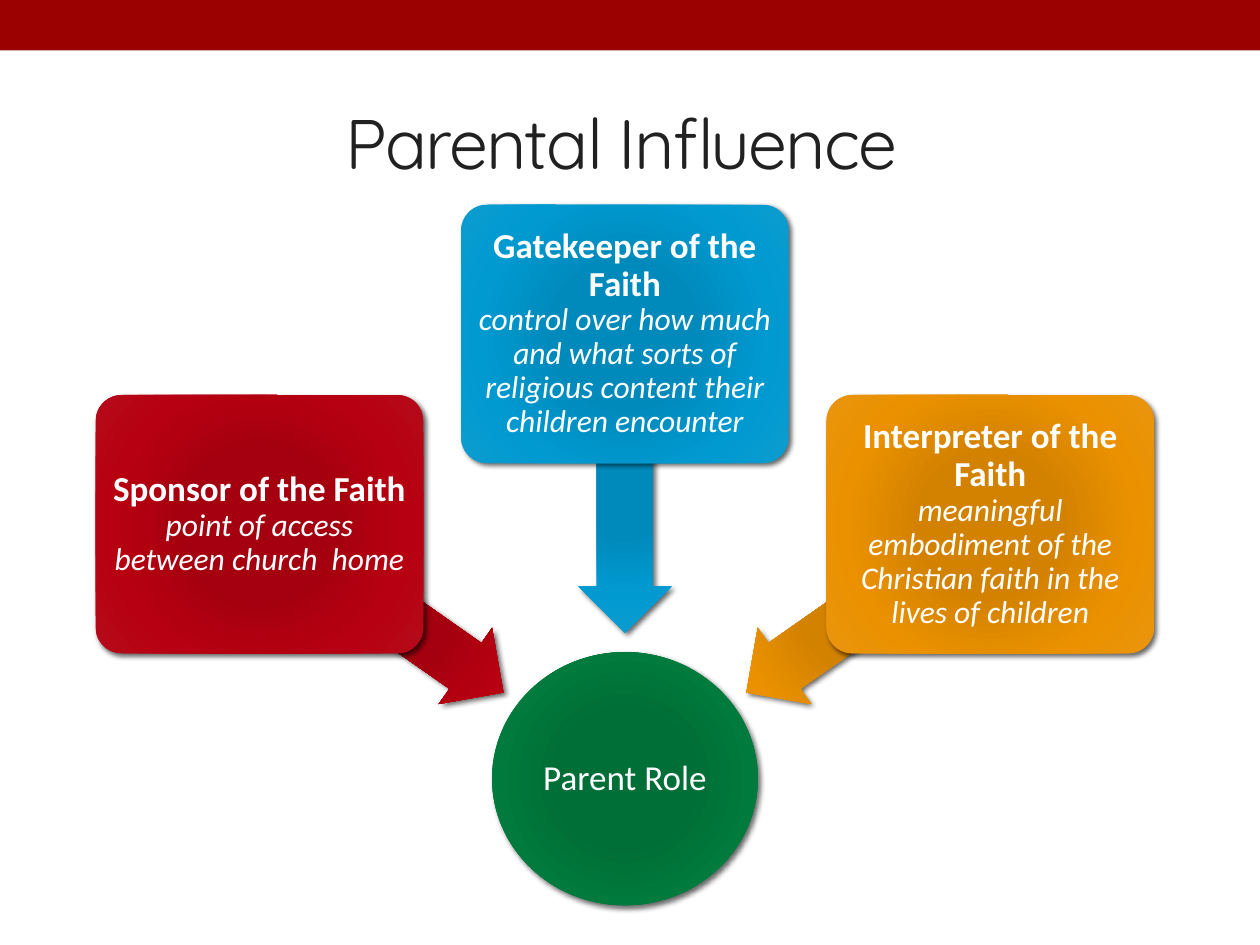
import pptx
import pptx.util
import pptx.oxml
import pptx.oxml.ns
import pptx.dml.color
import pptx.enum.shapes
import pptx.enum.text

Inches, Pt = pptx.util.Inches, pptx.util.Pt
Kind = pptx.enum.shapes.MSO_SHAPE
mid = pptx.enum.text.MSO_ANCHOR.MIDDLE
hub = pptx.enum.text.PP_ALIGN.CENTER
rgb = pptx.dml.color.RGBColor.from_string

theme = {
    "band": "9B0101",
    "red": ("A4000F", "B70011", "B50B1B"),
    "blue": ("008ABC", "009AD1", "0C9CCE"),
    "gold": ("D38200", "EB9100", "E8950E"),
    "green": ("006E37", "007A3D", "008040"),
    "title": {"name": "Quicksand", "size": Pt(40), "color": "212121"},
    "role": {"name": "Calibri", "size": Pt(20), "color": "FFFFFF"},
    "head": {"name": "Calibri", "size": Pt(20), "color": "FFFFFF", "bold": True},
    "note": {"name": "Calibri", "size": Pt(18), "color": "FFFFFF", "italic": True},
}

deck = pptx.Presentation()
deck.slide_width, deck.slide_height = Inches(10), Inches(7.5)
slide = deck.slides.add_slide(deck.slide_layouts[5])


def draw(kind, x, y, wide, high, hues, turn=0, adjust=()):
    shape = slide.shapes.add_shape(
        kind, Inches(x - wide / 2), Inches(y - high / 2), Inches(wide), Inches(high))
    shape.rotation = turn
    for i, value in enumerate(adjust):
        shape.adjustments[i] = value
    dark, main, edge = hues
    stops = "".join(
        f'<a:gs pos="{pos}000"><a:srgbClr val="{hue}"/></a:gs>'
        for pos, hue in ((0, dark), (34, dark), (70, main), (100, edge)))
    space = pptx.oxml.ns.nsdecls("a")
    props = shape._element.spPr
    props.append(pptx.oxml.parse_xml(
        f'<a:gradFill {space} rotWithShape="1"><a:gsLst>{stops}</a:gsLst>'
        '<a:path path="circle"><a:fillToRect l="100000" t="100000" r="100000" b="100000"/>'
        '</a:path></a:gradFill>'))
    shape.line.fill.background()
    props.append(pptx.oxml.parse_xml(
        f'<a:effectLst {space}><a:outerShdw blurRad="{Pt(3)}" dist="{Pt(2)}" dir="2700000" '
        'rotWithShape="0"><a:srgbClr val="000000"><a:alpha val="60000"/></a:srgbClr>'
        '</a:outerShdw></a:effectLst>'))
    return shape


def write(shape, parts, pad, lead):
    frame = shape.text_frame
    form = {"word_wrap": True, "vertical_anchor": mid}
    form.update({f"margin_{side}": Inches(pad) for side in ("left", "top", "right", "bottom")})
    for key, value in form.items():
        setattr(frame, key, value)
    para = frame.paragraphs[0]
    para.alignment, para.line_spacing = hub, lead
    for i, (text, style) in enumerate(parts):
        if i:
            para.add_line_break()
        run = para.add_run()
        run.text = text
        for key, value in theme[style].items():
            if key == "color":
                run.font.color.rgb = rgb(value)
            else:
                setattr(run.font, key, value)
    return run


band = slide.shapes.add_shape(Kind.RECTANGLE, 0, 0, deck.slide_width, Inches(0.4))
band.shadow.inherit = False
band.fill.solid()
band.fill.fore_color.rgb = rgb(theme["band"])
band.line.fill.background()

title = slide.shapes.title
place = {"left": 0.5, "top": 0.58, "width": 9, "height": 1.08}
for key, value in place.items():
    setattr(title, key, Inches(value))
run = write(title, [("Parental Influence ", "title")], 0.1, 1.0)
run._r.get_or_add_rPr().set("spc", "-100")

core, step, reach = 4.96, 2.9, 1.93
low, drop = 4.16, 1.51

role = draw(Kind.OVAL, core, 6.18, 2.11, 2.01, theme["green"])
write(role, [("Parent Role", "role")], 0.01, 0.9)

cards = [
    (-1, "red", 215, 2.36, "Sponsor of the Faith",
     "point of access between church  home"),
    (0, "blue", 270, 2.39, "Gatekeeper of the Faith",
     "control over how much and what sorts of religious content their children encounter"),
    (1, "gold", 325, 2.36, "Interpreter of the Faith",
     "meaningful embodiment of the Christian faith in the lives of children"),
]
for col, hue, turn, length, head, note in cards:
    rise = 0 if col else 1
    draw(Kind.LEFT_ARROW, core + col * reach, 4.82 - rise * 0.99, length, 0.74,
         theme[hue], turn, (0.6, 0.5))
    card = draw(Kind.ROUNDED_RECTANGLE, core + col * step, low - rise * drop, 2.6, 2.05,
                theme[hue], adjust=(0.1,))
    write(card, [(head, "head"), (note, "note")], 0.04, 0.9)

deck.save("out.pptx")
